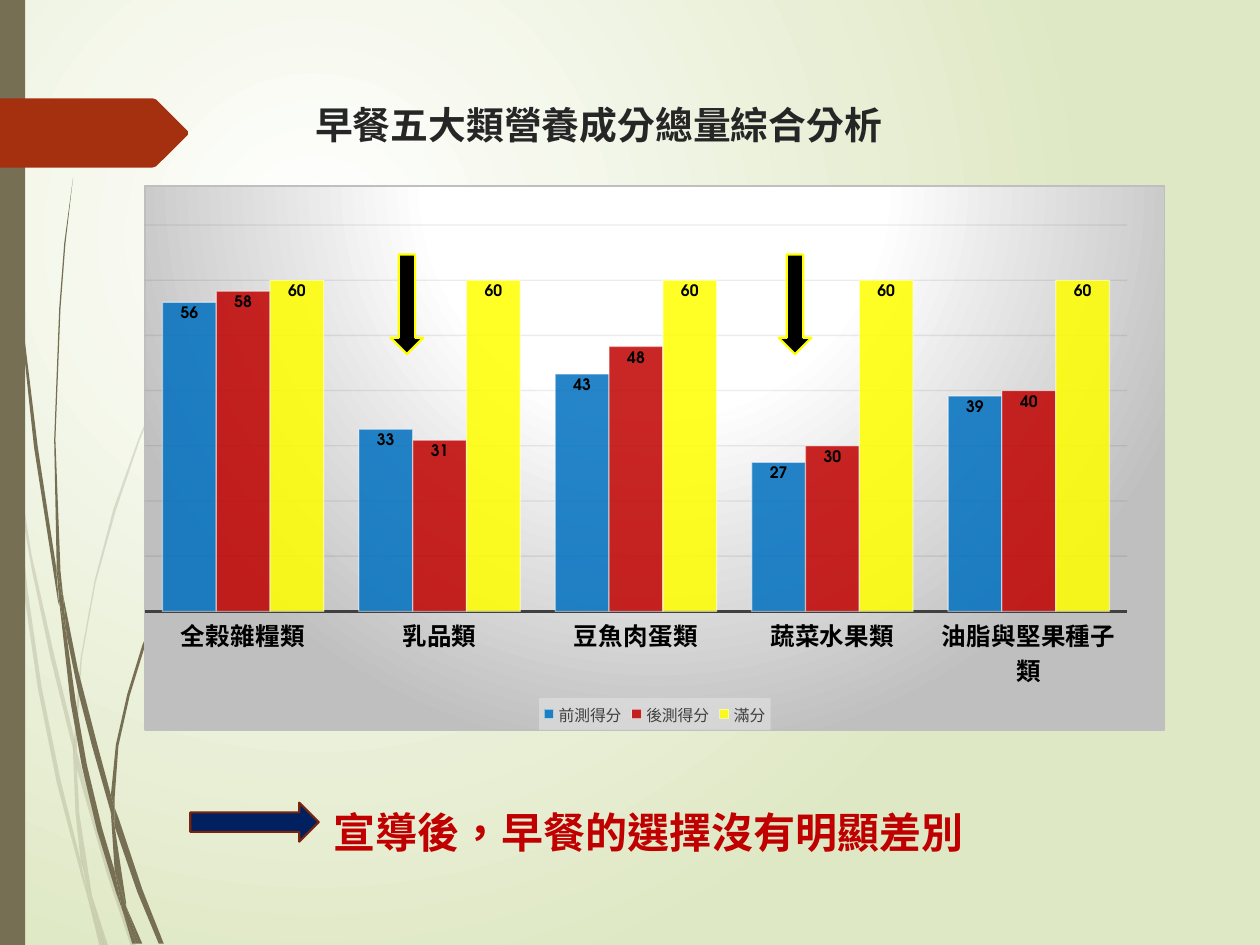
from lxml import etree
from pptx import Presentation
from pptx.chart.data import CategoryChartData
from pptx.dml.color import RGBColor
from pptx.enum.chart import XL_CHART_TYPE, XL_LABEL_POSITION, XL_LEGEND_POSITION, XL_TICK_MARK
from pptx.enum.shapes import MSO_SHAPE
from pptx.enum.text import MSO_ANCHOR, PP_ALIGN
from pptx.oxml import parse_xml
from pptx.oxml.ns import nsdecls, qn
from pptx.util import Inches, Pt

COLUMN, IN_END = XL_CHART_TYPE.COLUMN_CLUSTERED, XL_LABEL_POSITION.INSIDE_END
BOTTOM, NO_TICK = XL_LEGEND_POSITION.BOTTOM, XL_TICK_MARK.NONE
RECT, DOWN, RIGHT = MSO_SHAPE.RECTANGLE, MSO_SHAPE.DOWN_ARROW, MSO_SHAPE.RIGHT_ARROW
TOP, LEFT = MSO_ANCHOR.TOP, PP_ALIGN.LEFT


class Theme:
    """Colours, fonts and type sizes of the slide."""
    olive, rust, brown, green = "766F54", "A53010", "7A240C", "DFE8C4"
    navy, blue, red, yellow = "002060", "0070C0", "C00000", "FFFF00"
    white, pale, silver = "FFFFFF", "F2F2F2", "BFBFBF"
    grey, ink, grid, black = "404040", "262626", "0D0D0D", "000000"
    han, latin = "Noto Sans CJK SC", "TeX Gyre Adventor"
    title, note, base, label, small = 21.6, 24, 10, 14, 9


PALE = [
    [(.08, 3.5), (.06, 3.22), (0, 2.82), (0, 2.99), (.07, 3.44)],
    [(.4, 5.22), (.59, 5.99), (.59, 5.86), (.43, 5.2), (.25, 4.4), (.1, 3.45), (.12, 3.76), (.25, 4.51)],
    [(.64, 6.07), (.61, 5.96), (.61, 6.1), (.85, 6.94), (1.04, 7.51), (1.08, 7.51), (.88, 6.92)],
    [(.83, 7.51), (.86, 7.51), (.73, 7.11)],
    [(.64, 6.83), (.48, 6.19), (.33, 5.45), (.22, 4.69), (.12, 3.76), (.08, 3.5), (.19, 4.7), (.3, 5.46),
     (.45, 6.21), (.64, 6.93), (.7, 7.14), (.69, 7.07)],
    [(.58, 5.99), (.6, 6.46), (.64, 6.83), (.67, 6.92), (.73, 7.11), (.63, 6.46), (.61, 6.1), (.61, 6.08)],
    [(.61, 5.84), (.65, 5.22), (.76, 4.62), (.92, 4.05), (1.11, 3.49), (1.34, 2.95), (1.59, 2.45), (1.87, 1.98),
     (2.01, 1.75), (2.17, 1.54), (2.17, 1.53), (2.01, 1.75), (1.86, 1.97), (1.58, 2.44), (1.33, 2.94),
     (1.1, 3.48), (.9, 4.04), (.75, 4.61), (.64, 5.22), (.59, 5.84), (.59, 5.86), (.61, 5.96)],
    [(.7, 7.14), (.79, 7.51), (.82, 7.51)],
    [(.61, 6.08), (.61, 6.1), (.61, 5.96), (.59, 5.86), (.58, 5.99)],
    [(.67, 6.92), (.65, 6.83), (.69, 7.07), (.7, 7.14), (.82, 7.51), (.83, 7.51), (.73, 7.11)],
]
DARK = [
    [(.05, 1.1), (.14, 2.33), (.27, 3.55), (.46, 4.77), (.47, 4.81), (.45, 4.57), (.45, 4.53), (.3, 3.55),
     (.15, 2.32), (.06, 1.09), (.04, .48), (.03, 0), (.02, 0), (.03, .48)],
    [(.73, 5.92), (.88, 6.45), (.88, 6.31), (.77, 5.9), (.62, 5.32), (.5, 4.72), (.53, 5.05), (.62, 5.49)],
    [(.94, 6.49), (.91, 6.41), (.91, 6.56), (1.09, 7.08), (1.26, 7.49), (1.3, 7.49), (1.13, 7.06)],
    [(.91, 6.91), (.81, 6.57), (.69, 6.07), (.6, 5.56), (.53, 5.05), (.47, 4.77), (.56, 5.57), (.65, 6.08),
     (.77, 6.59), (.92, 7.08), (.97, 7.22), (.96, 7.17)],
    [(.5, 4.72), (.48, 4.53), (.44, 3.49), (.48, 2.45), (.52, 1.93), (.58, 1.41), (.51, 1.93), (.47, 2.45),
     (.43, 3.49), (.45, 4.49), (.49, 4.72)],
    [(1.1, 7.49), (1.13, 7.49), (1, 7.19)],
    [(.47, 4.77), (.53, 5.05), (.5, 4.72), (.49, 4.72), (.45, 4.49), (.45, 4.53)],
    [(.91, 6.33), (.94, 5.92), (1.03, 5.52), (1.15, 5.13), (1.31, 4.76), (1.69, 4.06), (1.91, 3.74), (2.03, 3.59),
     (2.16, 3.44), (2.15, 3.44), (1.91, 3.73), (1.68, 4.05), (1.29, 4.74), (1.13, 5.12), (1.01, 5.51),
     (.92, 5.91), (.88, 6.31), (.91, 6.41)],
    [(.97, 7.22), (1.05, 7.49), (1.08, 7.49)],
    [(.88, 6.45), (.91, 6.91), (.96, 7.06), (1, 7.19), (1, 7.16), (.91, 6.56), (.9, 6.51)],
    [(.88, 6.45), (.9, 6.51), (.91, 6.56), (.91, 6.41), (.88, 6.31)],
    [(.96, 7.06), (.91, 6.91), (.96, 7.17), (.97, 7.22), (1.08, 7.49), (1.1, 7.49), (1, 7.19)],
]
BANNER = [(0, .78), (1.21, .78), (1.24, .79), (1.49, 1.04), (1.49, 1.07), (1.24, 1.32), (1.21, 1.33), (0, 1.33)]


def fade(node, alpha):
    """Give each colour under a node an opacity in percent."""
    for color in node.iter(qn("a:srgbClr")):
        etree.SubElement(color, qn("a:alpha")).set("val", str(alpha * 1000))


def glow(stops, rect):
    """Make a circular gradient fill."""
    marks = "".join(f'<a:gs pos="{pos * 1000}"><a:srgbClr val="{code}"/></a:gs>' for pos, code in stops)
    sides = " ".join(f'{side}="{val * 1000}"' for side, val in zip("ltrb", rect))
    return parse_xml(f'<a:gradFill {nsdecls("a")} rotWithShape="1"><a:gsLst>{marks}</a:gsLst>'
                     f'<a:path path="circle"><a:fillToRect {sides}/></a:path></a:gradFill>')


def paint(item, fill=None, line=None, width=1.25):
    """Set the fill and outline of a shape or chart part."""
    if fill:
        item.fill.solid()
        item.fill.fore_color.rgb = RGBColor.from_string(fill)
    if line:
        item.line.color.rgb, item.line.width = RGBColor.from_string(line), Pt(width)
    else:
        item.line.fill.background()


def block(slide, kind, box, fill, line=None):
    """Add a preset shape."""
    shape = slide.shapes.add_shape(kind, *map(Inches, box))
    shape.shadow.inherit = False
    paint(shape, fill, line)


def outline(slide, pts, fill, alpha=100):
    """Add a closed free shape."""
    pts = [(Inches(x), Inches(y)) for x, y in pts]
    form = slide.shapes.build_freeform(*pts[0])
    form.add_line_segments(pts[1:])
    shape = form.convert_to_shape()
    shape.shadow.inherit = False
    paint(shape, fill)
    fade(shape.element.spPr, alpha)


def style(font, size, color, bold=False, name=Theme.latin):
    """Set the look of a font."""
    font.name, font.size, font.bold = name, Pt(size), bold
    font.color.rgb = RGBColor.from_string(color)


def write(shape, box, text, size, color):
    """Place a shape and fill it with one bold line."""
    shape.left, shape.top, shape.width, shape.height = map(Inches, box)
    frame = shape.text_frame
    frame.word_wrap, frame.vertical_anchor = True, TOP
    para = frame.paragraphs[0]
    para.text, para.alignment, para.line_spacing = text, LEFT, 1.0
    style(para.font, size, color, True, Theme.han)
    etree.SubElement(para._p.find(".//" + qn("a:defRPr")), qn("a:ea")).set("typeface", Theme.han)
    para.runs[0]._r.get_or_add_rPr().set("lang", "zh-TW")


def dress(chart):
    """Add the backdrop, plot layout and legend panel."""
    root = chart.element
    back = parse_xml(f'<c:spPr {nsdecls("c", "a")}><a:ln w="9525"><a:solidFill>'
                     f'<a:srgbClr val="{Theme.silver}"/></a:solidFill></a:ln></c:spPr>')
    back.insert(0, glow([(0, Theme.white), (39, Theme.white), (100, Theme.silver)], (50, -80, 50, 180)))
    root.find(qn("c:chart")).addnext(back)
    area = root.find(".//" + qn("c:plotArea"))
    for old in area.findall(qn("c:layout")):
        area.remove(old)
    rules = dict(layoutTarget="inner", xMode="edge", yMode="edge", x=0, y=0.072, w=0.963, h=0.71)
    spots = "".join(f'<c:{key} val="{val}"/>' for key, val in rules.items())
    area.insert(0, parse_xml(f'<c:layout {nsdecls("c")}><c:manualLayout>{spots}</c:manualLayout></c:layout>'))
    panel = parse_xml(f'<c:spPr {nsdecls("c", "a")}><a:solidFill><a:srgbClr val="{Theme.pale}"/>'
                      '</a:solidFill></c:spPr>')
    fade(panel, 39)
    chart.legend._element.find(qn("c:txPr")).addprevious(panel)


def graph(slide):
    """Add the column chart of scores."""
    data = CategoryChartData()
    data.categories = ["全榖雜糧類", "乳品類", "豆魚肉蛋類", "蔬菜水果類", "油脂與堅果種子類"]
    data.add_series("前測得分", [56, 33, 43, 27, 39])
    data.add_series("後測得分", [58, 31, 48, 30, 40])
    data.add_series("滿分", [60] * 5)
    chart = slide.shapes.add_chart(COLUMN, *map(Inches, (1.14, 1.47, 8.11, 4.33)), data).chart
    style(chart.font, Theme.base, Theme.black)
    chart.has_title, chart.has_legend = False, True
    chart.legend.position, chart.legend.include_in_layout = BOTTOM, False
    style(chart.legend.font, Theme.small, Theme.grey)
    cats, vals = chart.category_axis, chart.value_axis
    cats.major_tick_mark = NO_TICK
    style(cats.tick_labels.font, Theme.label, Theme.black, True)
    paint(cats.format, line=Theme.grey, width=1.5)
    vals.visible, vals.minimum_scale, vals.maximum_scale, vals.major_unit = False, 0, 70, 10
    paint(vals.major_gridlines.format, line=Theme.grid, width=0.75)
    fade(vals._element.find(qn("c:majorGridlines")), 7)
    plot = chart.plots[0]
    plot.gap_width, plot.overlap, plot.vary_by_categories = 65, 0, False
    for series, color in zip(plot.series, (Theme.blue, Theme.red, Theme.yellow)):
        paint(series.format, color, Theme.white, 0.75)
        props = series._element.find(qn("c:spPr"))
        fade(props.find(qn("a:solidFill")), 85)
        fade(props.find(qn("a:ln")), 50)
        series.data_labels.show_value, series.data_labels.position = True, IN_END
        style(series.data_labels.font, Theme.small, Theme.black, True)
    dress(chart)


def main():
    """Build the slide and save it."""
    deck = Presentation()
    deck.slide_width, deck.slide_height = Inches(10), Inches(7.5)
    slide = deck.slides.add_slide(deck.slide_layouts[5])
    slide.background.fill.solid()
    fill = slide.element.find(".//" + qn("p:bgPr") + "/" + qn("a:solidFill"))
    fill.getparent().replace(fill, glow([(0, Theme.white), (100, Theme.green)], (50, 50, 100, 100)))
    for group, alpha in ((PALE, 20), (DARK, 100)):
        for pts in group:
            outline(slide, pts, Theme.olive, alpha)
    block(slide, RECT, (0, 0, 0.2, 7.5), Theme.olive)
    outline(slide, BANNER, Theme.rust)
    write(slide.shapes.title, (2.4, 0.76, 5.24, 0.55), "早餐五大類營養成分總量綜合分析", Theme.title, Theme.ink)
    graph(slide)
    note = slide.shapes.add_textbox(0, 0, 0, 0)
    write(note, (2.55, 6.35, 5.24, 0.55), "宣導後，早餐的選擇沒有明顯差別", Theme.note, Theme.red)
    for left in (6.18, 3.1):
        block(slide, DOWN, (left, 2.02, 0.26, 0.79), Theme.black, Theme.yellow)
    block(slide, RIGHT, (1.51, 6.37, 1.02, 0.31), Theme.navy, Theme.brown)
    deck.save("out.pptx")


if __name__ == "__main__":
    main()
